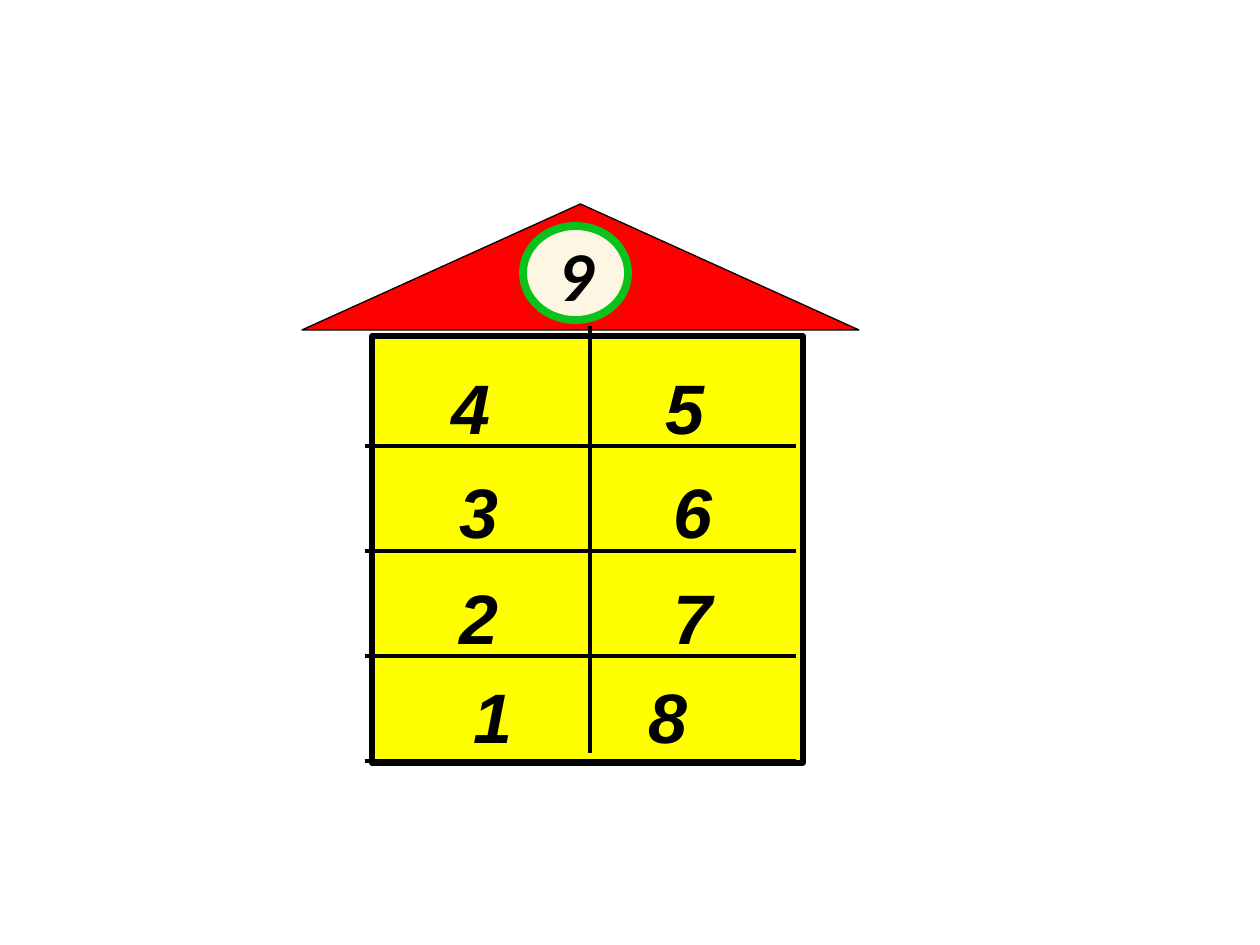
import pptx
import pptx.dml.color
import pptx.enum.shapes
import pptx.enum.text
import pptx.oxml.ns
import pptx.util
from dataclasses import dataclass
from lxml import etree

SCALE = 914400 / 126
SHAPE = pptx.enum.shapes.MSO_SHAPE
ALIGN = pptx.enum.text.PP_ALIGN


@dataclass(frozen=True)
class Theme:
    ink: str = "000000"
    roof: str = "FF0000"
    wall: str = "FFFF00"
    badge: str = "FDF6E3"
    ring: str = "0AC21C"
    face: str = "Arial"
    top_face: str = "Calibri"
    size: int = 40


THEME = Theme()


def px(num):
    return pptx.util.Emu(round(num * SCALE))


def tint(code):
    return pptx.dml.color.RGBColor.from_string(code)


def add_tab(para, stop):
    props = para._p.get_or_add_pPr()
    tabs = etree.SubElement(props, pptx.oxml.ns.qn("a:tabLst"))
    etree.SubElement(tabs, pptx.oxml.ns.qn("a:tab"), pos=str(px(stop)), algn="l")


def put_text(frame, text, face=THEME.face, align=ALIGN.LEFT, stop=None):
    para = frame.paragraphs[0]
    para.alignment = align
    if stop:
        add_tab(para, stop)
    run = para.add_run()
    run.text = text
    font = run.font
    font.name, font.size = face, pptx.util.Pt(THEME.size)
    font.bold = font.italic = True
    font.color.rgb = tint(THEME.ink)


def add_block(slide, kind, box, fill, line, width):
    shape = slide.shapes.add_shape(kind, *map(px, box))
    shape.shadow.inherit = False
    shape.fill.solid()
    shape.fill.fore_color.rgb = tint(fill)
    shape.line.color.rgb = tint(line)
    shape.line.width = pptx.util.Pt(width)
    return shape


def add_rule(slide, *ends):
    rule = slide.shapes.add_connector(
        pptx.enum.shapes.MSO_CONNECTOR.STRAIGHT, *map(px, ends))
    rule.line.color.rgb = tint(THEME.ink)
    rule.line.width = pptx.util.Pt(2.25)
    etree.SubElement(rule._element.spPr, pptx.oxml.ns.qn("a:effectLst"))


def add_pair(slide, pair, box, inset, stop):
    frame = slide.shapes.add_textbox(*map(px, box)).text_frame
    frame.word_wrap = True
    frame.margin_left = px(inset)
    frame.margin_top, frame.margin_bottom = px(13), px(3)
    put_text(frame, "\t".join(pair), stop=stop)


def add_house(slide):
    add_block(slide, SHAPE.ISOSCELES_TRIANGLE, (302, 204, 557, 126),
              THEME.roof, THEME.ink, 0.75)
    badge = add_block(slide, SHAPE.OVAL, (523, 226, 105, 94),
                      THEME.badge, THEME.ring, 4.5)
    badge.text_frame.word_wrap = False
    badge.text_frame.vertical_anchor = pptx.enum.text.MSO_ANCHOR.MIDDLE
    put_text(badge.text_frame, "9", face=THEME.top_face, align=ALIGN.CENTER)
    add_block(slide, SHAPE.RECTANGLE, (372, 336, 431, 427),
              THEME.wall, THEME.ink, 3)
    for row in range(4):
        level = 446 + 105 * row
        add_rule(slide, 365, level, 796, level)
    add_rule(slide, 590, 326, 590, 753)


def main():
    deck = pptx.Presentation()
    deck.slide_width, deck.slide_height = px(1260), px(945)
    slide = deck.slides.add_slide(deck.slide_layouts[6])
    add_house(slide)
    rows = [
        ("45", (438, 351, 294, 97), 13, 214),
        ("36", (428, 456, 315, 97), 32, 214),
        ("27", (428, 562, 315, 97), 32, 214),
        ("18", (461, 661, 273, 97), 13, 175),
    ]
    for row in rows:
        add_pair(slide, *row)
    deck.save("out.pptx")


if __name__ == "__main__":
    main()
